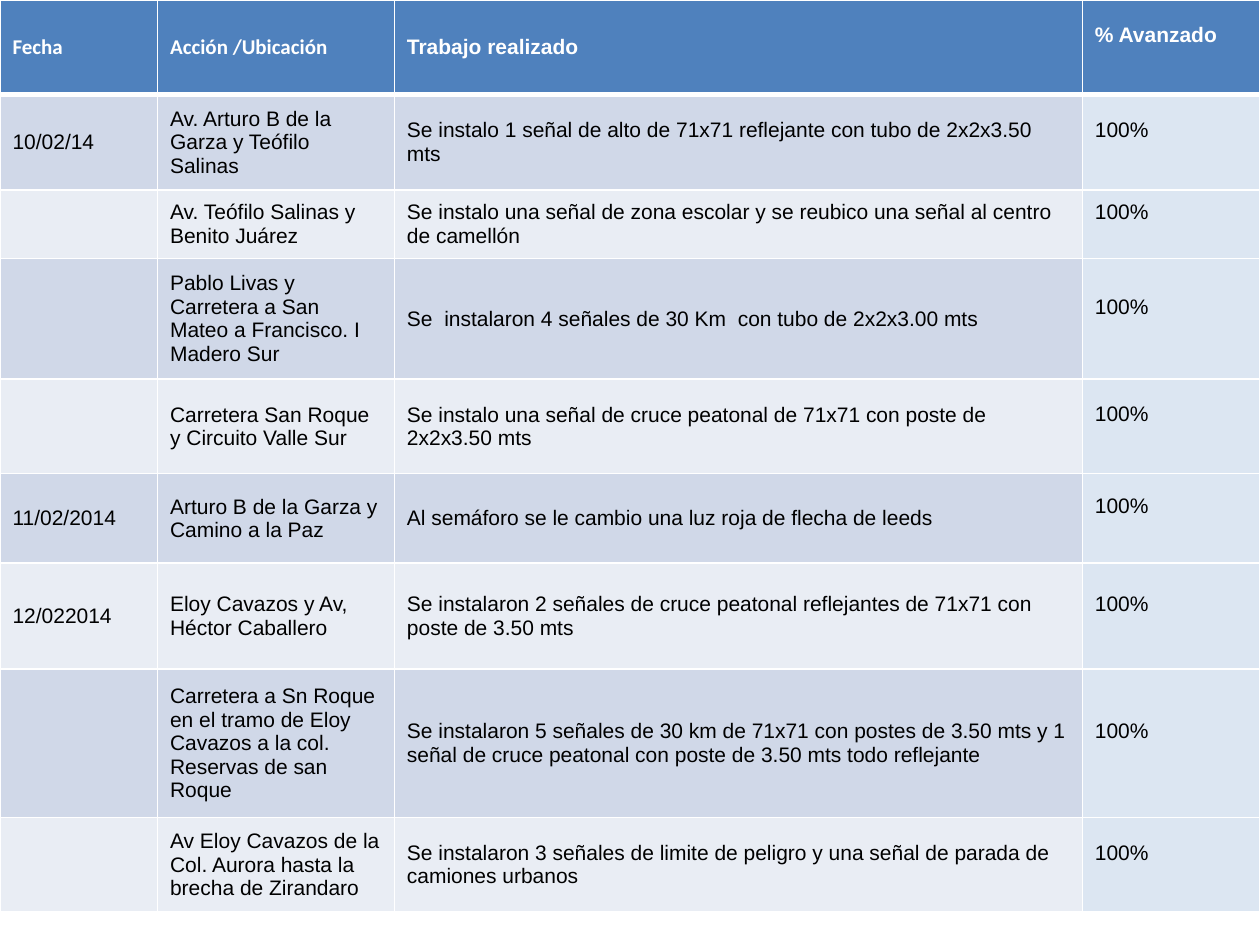
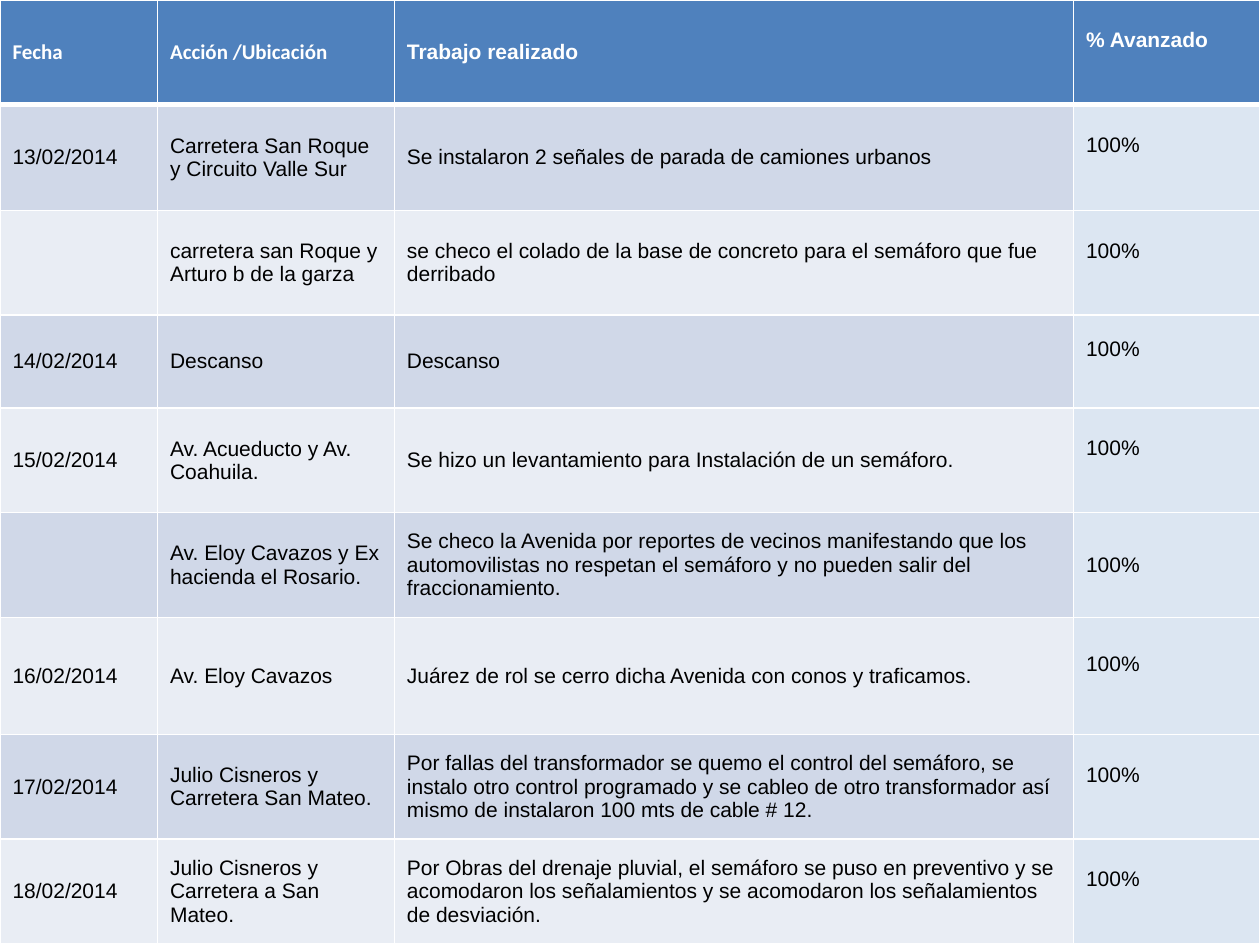
"""Build two slides with the daily log of road sign and traffic light work."""
from dataclasses import dataclass

import pptx
import pptx.dml.color
import pptx.enum.text
import pptx.oxml
import pptx.oxml.ns
import pptx.util

Inches = pptx.util.Inches
HEADER_FILL = "4F81BD"
BAND_FILLS = ("D0D8E8", "E9EDF4")
PROGRESS_FILL = "DCE6F2"
WHITE = "FFFFFF"
BLACK = "000000"
HEADERS = ("Fecha", "Acción /Ubicación", "Trabajo realizado", "% Avanzado")
HEADER_FONTS = ("Calibri", "Calibri", "Arial", "Arial")
PROGRESS_COL = 3
THIN, THICK = 1, 3
TEXT_SIZE = 12
RAISED_MARGIN = 0.24
NORMAL_MARGIN = 0.05


@dataclass
class Work:
    height: float
    date: str
    place: str
    task: str
    progress: str = "100%"
    raised: bool = True


@dataclass
class Log:
    widths: tuple[float, ...]
    header_height: float
    works: list[Work]


LOGS = [
    Log((1.25, 1.88, 5.46, 1.41), 0.75, [
        Work(0.76, "10/02/14", "Av. Arturo B de la Garza y Teófilo Salinas",
             "Se instalo 1 señal de alto de 71x71 reflejante con tubo de 2x2x3.50 mts"),
        Work(0.54, "", "Av. Teófilo Salinas y Benito Juárez",
             "Se instalo una señal de zona escolar y se reubico una señal al centro "
             "de camellón"),
        Work(0.96, "", "Pablo Livas y Carretera a San Mateo a Francisco. I Madero Sur",
             "Se  instalaron 4 señales de 30 Km  con tubo de 2x2x3.00 mts"),
        Work(0.75, "", "Carretera San Roque y Circuito Valle Sur",
             "Se instalo una señal de cruce peatonal de 71x71 con poste de 2x2x3.50 mts"),
        Work(0.71, "11/02/2014", "Arturo B de la Garza y Camino a la Paz",
             "Al semáforo se le cambio una luz roja de flecha de leeds"),
        Work(0.84, "12/022014", "Eloy Cavazos y Av, Héctor Caballero",
             "Se instalaron 2 señales de cruce peatonal reflejantes de 71x71 con "
             "poste de 3.50 mts"),
        Work(1.18, "", "Carretera a Sn Roque en el tramo de Eloy Cavazos a la col. "
             "Reservas de san Roque",
             "Se instalaron 5 señales de 30 km de 71x71 con postes de 3.50 mts y 1 "
             "señal de cruce peatonal con poste de 3.50 mts todo reflejante"),
        Work(0.75, "", "Av Eloy Cavazos de la Col. Aurora hasta la brecha de Zirandaro",
             "Se instalaron 3 señales de limite de peligro y una señal de parada de "
             "camiones urbanos"),
    ]),
    Log((1.25, 1.88, 5.39, 1.48), 0.83, [
        Work(0.84, "13/02/2014", "Carretera San Roque y Circuito Valle Sur",
             "Se instalaron 2 señales de parada de camiones urbanos"),
        Work(0.83, "", "carretera san Roque y Arturo b de la garza",
             "se checo el colado de la base de concreto para el semáforo que fue "
             "derribado"),
        Work(0.74, "14/02/2014", "Descanso", "Descanso"),
        Work(0.83, "15/02/2014", "Av. Acueducto y Av. Coahuila.",
             "Se hizo un levantamiento para Instalación de un semáforo."),
        Work(0.83, "", "Av. Eloy Cavazos y Ex hacienda el Rosario.",
             "Se checo la Avenida por reportes de vecinos manifestando que los "
             "automovilistas no respetan el semáforo y no pueden salir del "
             "fraccionamiento.", raised=False),
        Work(0.93, "16/02/2014", "Av. Eloy Cavazos",
             "Juárez de rol se cerro dicha Avenida con conos y traficamos."),
        Work(0.83, "17/02/2014", "Julio Cisneros y Carretera San Mateo.",
             "Por fallas del transformador se quemo el control del semáforo, se "
             "instalo otro control programado y se cableo de otro transformador así "
             "mismo de instalaron 100 mts de cable # 12."),
        Work(0.83, "18/02/2014", "Julio Cisneros y Carretera a San Mateo.",
             "Por Obras del drenaje pluvial, el semáforo se puso en preventivo y se "
             "acomodaron los señalamientos y se acomodaron los señalamientos de "
             "desviación."),
    ]),
]


def rgb(value: str) -> pptx.dml.color.RGBColor:
    return pptx.dml.color.RGBColor.from_string(value)


def set_borders(cell, top: int, bottom: int) -> None:
    tc_pr = cell._tc.get_or_add_tcPr()
    for side, width in {"L": THIN, "R": THIN, "T": top, "B": bottom}.items():
        tc_pr.append(pptx.oxml.parse_xml(
            f'<a:ln{side} {pptx.oxml.ns.nsdecls("a")} w="{pptx.util.Pt(width)}">'
            f'<a:solidFill><a:srgbClr val="{WHITE}"/></a:solidFill></a:ln{side}>'))


def write_cell(cell, text: str, fill: str, font: dict, raised: bool) -> None:
    cell.fill.solid()
    cell.fill.fore_color.rgb = rgb(fill)
    cell.vertical_anchor = pptx.enum.text.MSO_ANCHOR.MIDDLE
    cell.margin_bottom = Inches(RAISED_MARGIN if raised else NORMAL_MARGIN)
    p = cell.text_frame.paragraphs[0]
    if not text:
        p.font.size = pptx.util.Pt(TEXT_SIZE)
        return
    r = p.add_run()
    r.text = text
    r.font.size = pptx.util.Pt(TEXT_SIZE)
    r.font.color.rgb = rgb(font["color"])
    for name in ("name", "bold"):
        setattr(r.font, name, font[name])


def add_log(prs, log: Log) -> None:
    slide = prs.slides.add_slide(prs.slide_layouts[6])
    heights = [log.header_height] + [work.height for work in log.works]
    table = slide.shapes.add_table(
        len(heights), len(HEADERS), 0, 0,
        Inches(sum(log.widths)), Inches(sum(heights))).table
    table.horz_banding = False
    for column, width in zip(table.columns, log.widths):
        column.width = Inches(width)
    for row, height in zip(table.rows, heights):
        row.height = Inches(height)
    for col, (title, name) in enumerate(zip(HEADERS, HEADER_FONTS)):
        cell = table.cell(0, col)
        set_borders(cell, THIN, THICK)
        font = {"name": name, "bold": True, "color": WHITE}
        write_cell(cell, title, HEADER_FILL, font, col == PROGRESS_COL)
    body_font = {"name": "Arial", "bold": False, "color": BLACK}
    for row, work in enumerate(log.works, start=1):
        band = BAND_FILLS[(row - 1) % 2]
        for col, text in enumerate((work.date, work.place, work.task, work.progress)):
            cell = table.cell(row, col)
            is_progress = col == PROGRESS_COL
            set_borders(cell, THICK if row == 1 else THIN, THIN)
            write_cell(cell, text, PROGRESS_FILL if is_progress else band,
                       body_font, is_progress and work.raised)


def main() -> None:
    prs = pptx.Presentation()
    prs.slide_width, prs.slide_height = Inches(10), Inches(7.5)
    for log in LOGS:
        add_log(prs, log)
    prs.save("out.pptx")


if __name__ == "__main__":
    main()
